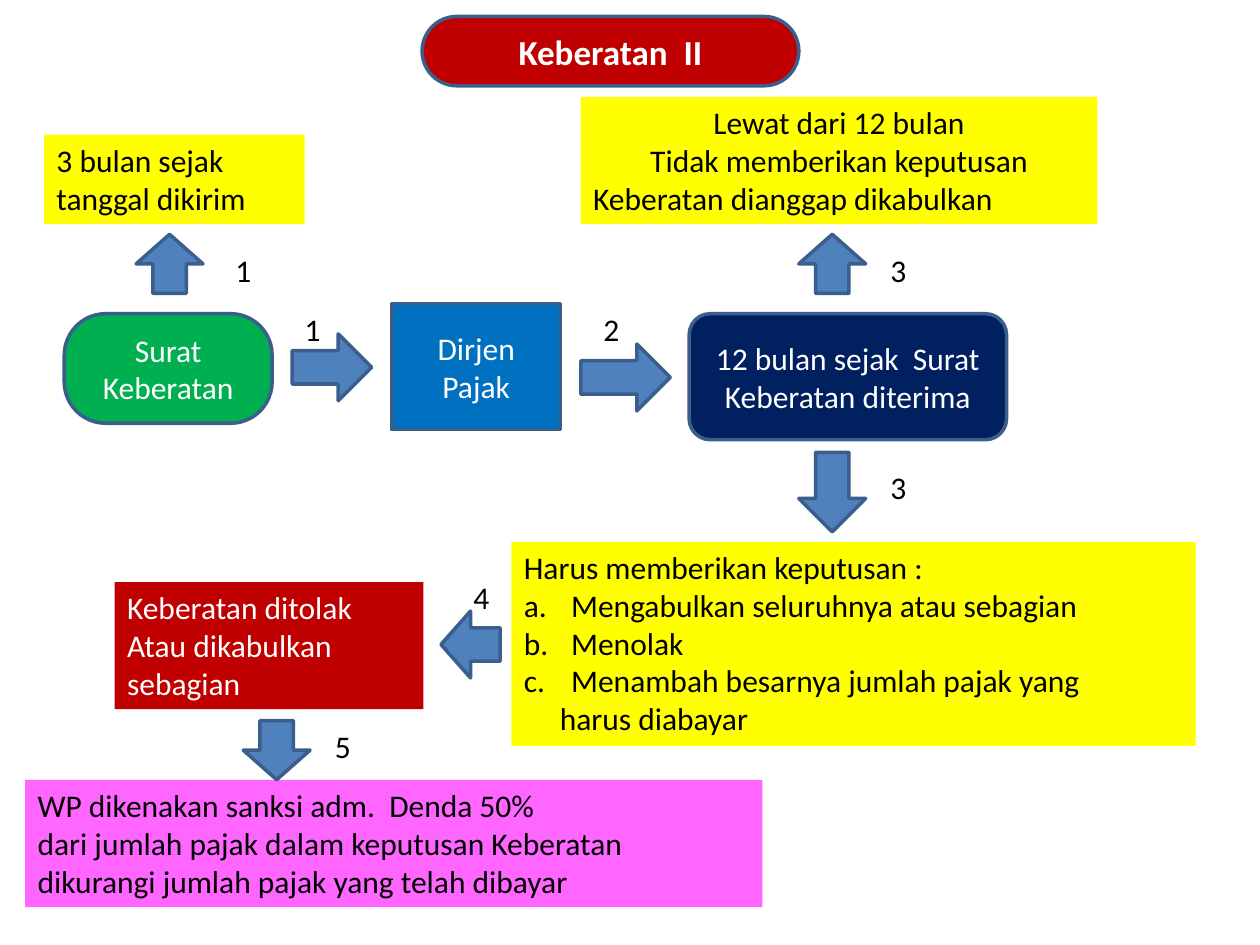
"""Builds the one-slide flow chart of the tax objection process."""
from lxml import etree
from pptx import Presentation
from pptx.dml.color import RGBColor
from pptx.enum import shapes, text
from pptx.oxml import ns
from pptx.util import Pt

FORM = shapes.MSO_SHAPE
MID, TOP = text.MSO_ANCHOR.MIDDLE, text.MSO_ANCHOR.TOP
LEFT, CENTER = text.PP_ALIGN.LEFT, text.PP_ALIGN.CENTER
EDGE, BLUE, WHITE, BLACK = "3A5F8C", "4F81BD", "FFFFFF", "000000"
TITLE = "Keberatan  II"
PILL = (241.2, 9.4, 215.3, 39.6)

STEPS = [
    (FORM.ROUNDED_RECTANGLE, 0.378, (36.7, 179.3, 118.8, 62.6), "00B050", "Surat Keberatan"),
    (FORM.RECTANGLE, None, (223.9, 173.5, 96.5, 72), "0070C0", "Dirjen Pajak"),
    (FORM.ROUNDED_RECTANGLE, None, (393.8, 179.3, 181.4, 72), "002060",
     "12 bulan sejak  Surat Keberatan diterima"),
]
NOTES = [
    ((25.2, 77, 149, 51.1), "FFFF00", BLACK,
     [("3 bulan sejak", ""), ("tanggal dikirim", "")]),
    ((331.9, 55.4, 295.2, 72.7), "FFFF00", BLACK,
     [("Lewat dari 12 bulan", "center"), ("Tidak memberikan keputusan", "center"),
      ("Keberatan dianggap dikabulkan", "")]),
    ((292.3, 309.6, 391, 116.6), "FFFF00", BLACK,
     [("Harus memberikan keputusan :", ""),
      ("Mengabulkan seluruhnya atau sebagian", "item"), ("Menolak", "item"),
      ("Menambah besarnya jumlah pajak yang", "item"), ("harus diabayar", "indent")]),
    ((65.5, 332.6, 176.4, 72.7), "C00000", WHITE,
     [("Keberatan ditolak", ""), ("Atau dikabulkan", ""), ("sebagian", "")]),
    ((14.4, 445.7, 421.2, 72.7), "FF66FF", BLACK,
     [("WP dikenakan sanksi adm.  Denda 50%", ""),
      ("dari jumlah pajak dalam keputusan Keberatan", ""),
      ("dikurangi jumlah pajak yang telah dibayar", "")]),
]
THICK = 38.2
ARROWS = [
    (FORM.UP_ARROW, 77.8, 133.9, 33.8, "1", (127.4, 139.7)),
    (FORM.RIGHT_ARROW, 167, 190.8, 45.4, "1", (167, 173.5)),
    (FORM.RIGHT_ARROW, 331.9, 196.6, 51.1, "2", (337.7, 173.5)),
    (FORM.UP_ARROW, 456.5, 133.9, 33.8, "3", (501.8, 139.7)),
    (FORM.DOWN_ARROW, 456.5, 258.5, 45.4, "3", (501.8, 264.2)),
    (FORM.LEFT_ARROW, 252, 349.2, 33.8, "4", (263.5, 326.9)),
    (FORM.DOWN_ARROW, 139, 411.8, 33.8, "5", (184.3, 411.8)),
]


def color(code):
    return RGBColor.from_string(code)


def draw(slide, form, box, fill, line=EDGE, round_by=None):
    shape = slide.shapes.add_shape(form, *map(Pt, box))
    shape.shadow.inherit = False
    shape.fill.solid()
    shape.fill.fore_color.rgb = color(fill)
    if line:
        shape.line.color.rgb = color(line)
        shape.line.width = Pt(2)
    else:
        shape.line.fill.background()
    if round_by is not None:
        shape.adjustments[0] = round_by
    return shape


def indent(par, style):
    props = par._p.get_or_add_pPr()
    left, first = (27, -27) if style == "item" else (20.5, 0)
    props.set("marL", str(Pt(left)))
    props.set("indent", str(Pt(first)))
    if style == "item":
        etree.SubElement(props, ns.qn("a:buFont"), typeface="+mj-lt")
        etree.SubElement(props, ns.qn("a:buAutoNum"), type="alphaLcPeriod")


def write(shape, lines, ink, anchor=TOP, size=18, bold=False):
    frame = shape.text_frame
    frame.word_wrap = True
    frame.vertical_anchor = anchor
    for num, (words, style) in enumerate(lines):
        par = frame.add_paragraph() if num else frame.paragraphs[0]
        par.alignment = CENTER if style == "center" else LEFT
        if style in ("item", "indent"):
            indent(par, style)
        run = par.add_run()
        run.text = words
        font = run.font
        font.name, font.size, font.bold = "Calibri", Pt(size), bold
        font.color.rgb = color(ink)


def main():
    deck = Presentation()
    deck.slide_width, deck.slide_height = Pt(720), Pt(540)
    slide = deck.slides.add_slide(deck.slide_layouts[5])

    draw(slide, FORM.ROUNDED_RECTANGLE, PILL, "C00000", round_by=0.5)
    title = slide.shapes.title
    title.left, title.top, title.width, title.height = map(Pt, PILL)
    slide.shapes._spTree.append(title._element)
    write(title, [(TITLE, "center")], WHITE, MID, 20, True)

    for form, bend, box, fill, words in STEPS:
        step = draw(slide, form, box, fill, round_by=bend)
        write(step, [(words, "center")], WHITE, MID)
    for box, fill, ink, lines in NOTES:
        write(draw(slide, FORM.RECTANGLE, box, fill, None), lines, ink)
    for form, left, top, span, mark, spot in ARROWS:
        flat = form in (FORM.LEFT_ARROW, FORM.RIGHT_ARROW)
        size = (span, THICK) if flat else (THICK, span)
        draw(slide, form, (left, top, *size), BLUE)
        label = slide.shapes.add_textbox(*map(Pt, (*spot, 25.9, 28.8)))
        write(label, [(mark, "")], BLACK)

    deck.save("out.pptx")


if __name__ == "__main__":
    main()
